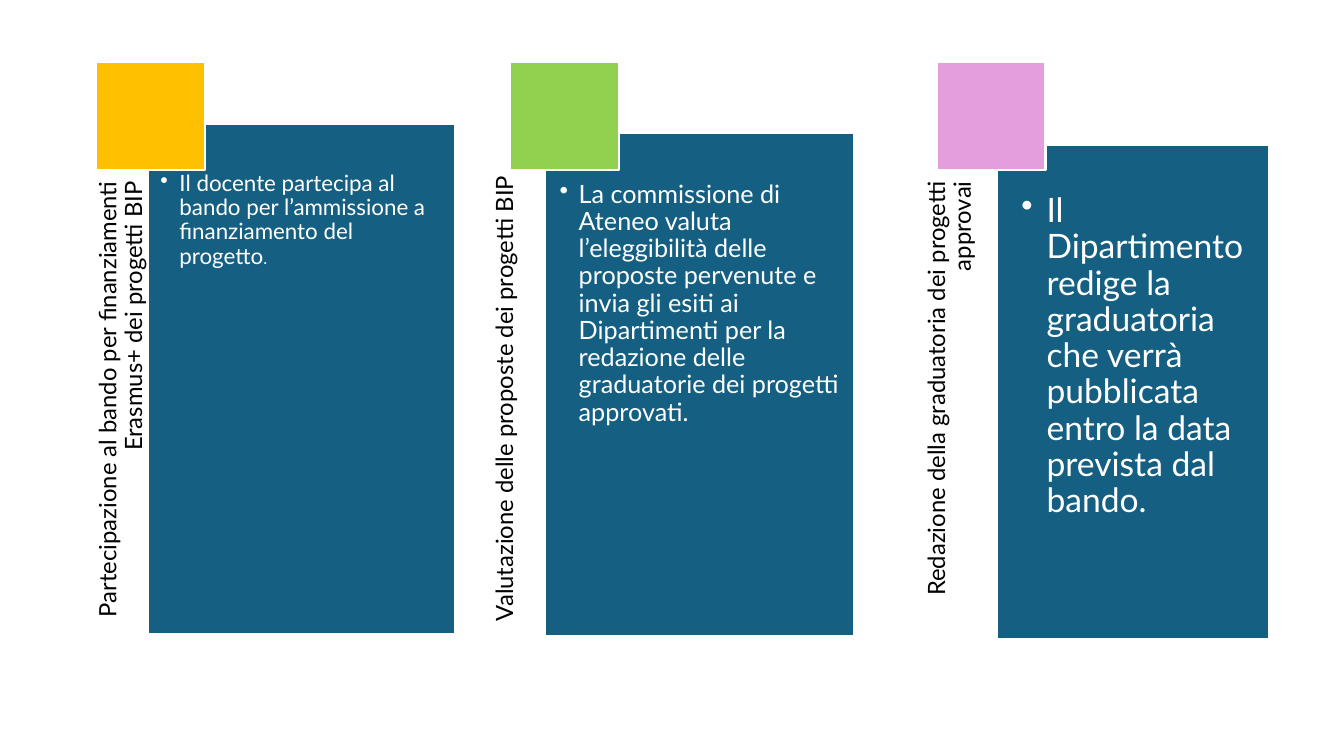
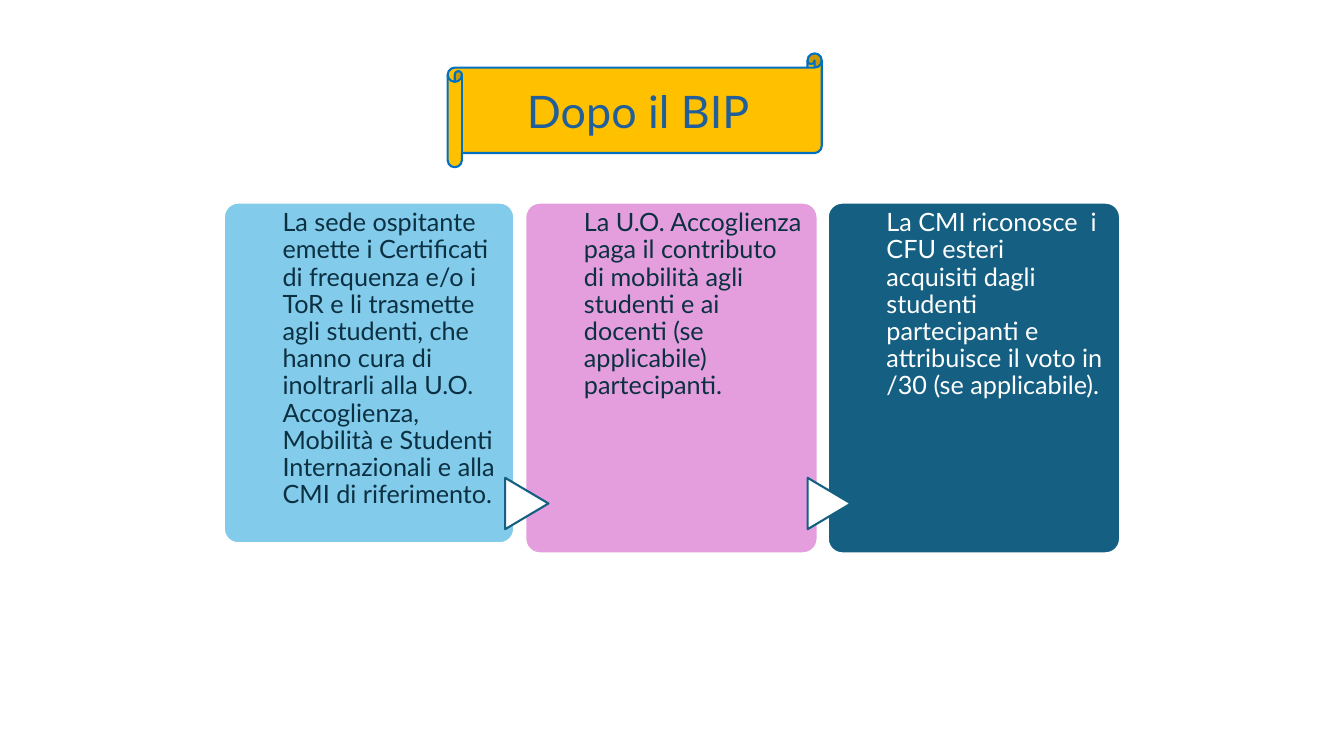
from dataclasses import dataclass
from typing import Any

from lxml import etree
from pptx import Presentation
from pptx import util as u
from pptx.dml.color import RGBColor
from pptx.enum import shapes, text
from pptx.oxml.ns import qn

PX = 9144
FONT = "Lato"
COLORS = {
    "white": "FFFFFF",
    "black": "000000",
    "petrol": "156082",
    "gold": "FFC000",
    "green": "92D050",
    "pink": "E59EDD",
    "sky": "83CBEB",
    "ink": "0B3041",
    "scroll_edge": "0070C0",
    "scroll_title": "215F9A",
}
KIND = shapes.MSO_SHAPE
TOP_ANCHOR = {"word_wrap": True, "vertical_anchor": text.MSO_ANCHOR.TOP}
BODY = {"line_spacing": 0.9, "alignment": text.PP_ALIGN.LEFT}
LABEL = {"line_spacing": 0.9, "alignment": text.PP_ALIGN.RIGHT}
TITLE = {"alignment": text.PP_ALIGN.CENTER}


@dataclass(frozen=True)
class Area:
    left: int
    top: int
    width: int
    height: int

    def emu(self) -> list[u.Emu]:
        return [px(n) for n in (self.left, self.top, self.width, self.height)]


@dataclass(frozen=True)
class Words:
    content: str
    size: int


@dataclass(frozen=True)
class Phase:
    label: str
    label_area: Area
    panel: Area
    marker_left: int
    marker_color: str
    inset: int
    hanging: int
    description: tuple[Words, ...]


@dataclass(frozen=True)
class Step:
    description: str
    width: int
    height: int
    fill: str
    ink: str


PHASES = (
    Phase(
        "Partecipazione al bando per finanziamenti Erasmus+ dei progetti BIP",
        Area(-127, 354, 499, 55), Area(147, 123, 304, 506), 95, "gold", 12, 19,
        (Words("Il docente partecipa al bando per l’ammissione a "
               "finanziamento del progetto", 16), Words(".", 12)),
    ),
    Phase(
        "Valutazione delle proposte dei progetti BIP",
        Area(266, 349, 499, 54), Area(541, 132, 306, 499), 506, "green", 14, 19,
        (Words("La commissione di Ateneo valuta l’eleggibilità delle proposte "
               "pervenute e invia gli esiti ai Dipartimenti per la redazione "
               "delle graduatorie dei progetti approvati.", 18),),
    ),
    Phase(
        "Redazione della graduatoria dei progetti approvai",
        Area(706, 343, 499, 77), Area(989, 144, 270, 490), 929, "pink", 24, 25,
        (Words("Il Dipartimento redige la graduatoria che verrà pubblicata "
               "entro la data prevista dal bando.", 24),),
    ),
)

STEPS = (
    Step("La sede ospitante emette i Certificati di frequenza e/o i ToR e li "
         "trasmette agli studenti, che hanno cura di inoltrarli alla U.O. "
         "Accoglienza, Mobilità e Studenti Internazionali e alla CMI di "
         "riferimento.", 288, 338, "sky", "ink"),
    Step("La U.O. Accoglienza paga il contributo di mobilità agli studenti e "
         "ai docenti (se applicabile) partecipanti.", 290, 348, "pink", "ink"),
    Step("La CMI riconosce  i CFU esteri  acquisiti dagli studenti partecipanti "
         "e attribuisce il voto in /30 (se applicabile).",
         290, 348, "petrol", "white"),
)


def px(length: int) -> u.Emu:
    return u.Emu(length * PX)


def rgb(name: str) -> RGBColor:
    return RGBColor.from_string(COLORS[name])


def apply(target: Any, values: dict[str, Any]) -> None:
    for name, value in values.items():
        setattr(target, name, value)


def margins(left: int, top: int, right: int, bottom: int) -> dict[str, u.Emu]:
    return {
        "margin_left": px(left),
        "margin_top": px(top),
        "margin_right": px(right),
        "margin_bottom": px(bottom),
    }


def add_block(slide: Any, kind: Any, area: Area, fill: str, edge: str = "white") -> Any:
    block = slide.shapes.add_shape(kind, *area.emu())
    block.shadow.inherit = False
    block.fill.solid()
    block.fill.fore_color.rgb = rgb(fill)
    block.line.color.rgb = rgb(edge)
    block.line.width = u.Pt(1.5)
    return block


def write(holder: Any, words: tuple[Words, ...], color: str, frame: dict[str, Any],
          layout: dict[str, Any], hanging: int = 0) -> None:
    apply(holder.text_frame, frame)
    paragraph = holder.text_frame.paragraphs[0]
    if hanging:
        properties = paragraph._p.get_or_add_pPr()
        properties.set("marL", str(px(hanging)))
        properties.set("indent", str(-px(hanging)))
        etree.SubElement(properties, qn("a:buChar")).set("char", "•")
    apply(paragraph, layout)
    for part in words:
        run = paragraph.add_run()
        run.text = part.content
        apply(run.font, {"name": FONT, "size": u.Pt(part.size)})
        run.font.color.rgb = rgb(color)


def draw_phase(slide: Any, phase: Phase) -> None:
    label = slide.shapes.add_textbox(*phase.label_area.emu())
    label.rotation = 270
    write(label, (Words(phase.label, 17),), "black",
          TOP_ANCHOR | margins(0, 0, 48, 0), LABEL)
    panel = add_block(slide, KIND.RECTANGLE, phase.panel, "petrol")
    inset = phase.inset
    write(panel, phase.description, "white",
          TOP_ANCHOR | margins(inset, 48, inset, inset), BODY, phase.hanging)
    add_block(slide, KIND.RECTANGLE, Area(phase.marker_left, 61, 108, 108),
              phase.marker_color)


def draw_step(slide: Any, index: int, step: Step) -> None:
    left = 222 + 300 * index - (1 if index else 0)
    card = add_block(slide, KIND.ROUNDED_RECTANGLE,
                     Area(left, 201, step.width, step.height), step.fill)
    card.adjustments[0] = 0.05
    write(card, (Words(step.description, 18),), step.ink,
          TOP_ANCHOR | margins(54, 3, 11, 0), BODY)
    if index:
        arrow = add_block(slide, KIND.FLOWCHART_EXTRACT,
                          Area(left - 24, 478, 51, 43), "white", "petrol")
        arrow.rotation = 90


def main() -> None:
    deck = Presentation()
    apply(deck, {"slide_width": px(1333), "slide_height": px(750)})
    blank = deck.slide_layouts[6]

    selection = deck.slides.add_slide(blank)
    for phase in PHASES:
        draw_phase(selection, phase)

    follow_up = deck.slides.add_slide(blank)
    scroll = add_block(follow_up, KIND.HORIZONTAL_SCROLL, Area(444, 53, 371, 113),
                       "gold", "scroll_edge")
    write(scroll, (Words("Dopo il BIP", 32),), "scroll_title",
          {"word_wrap": True, "vertical_anchor": text.MSO_ANCHOR.MIDDLE}, TITLE)
    for index, step in enumerate(STEPS):
        draw_step(follow_up, index, step)

    deck.save("out.pptx")


if __name__ == "__main__":
    main()
